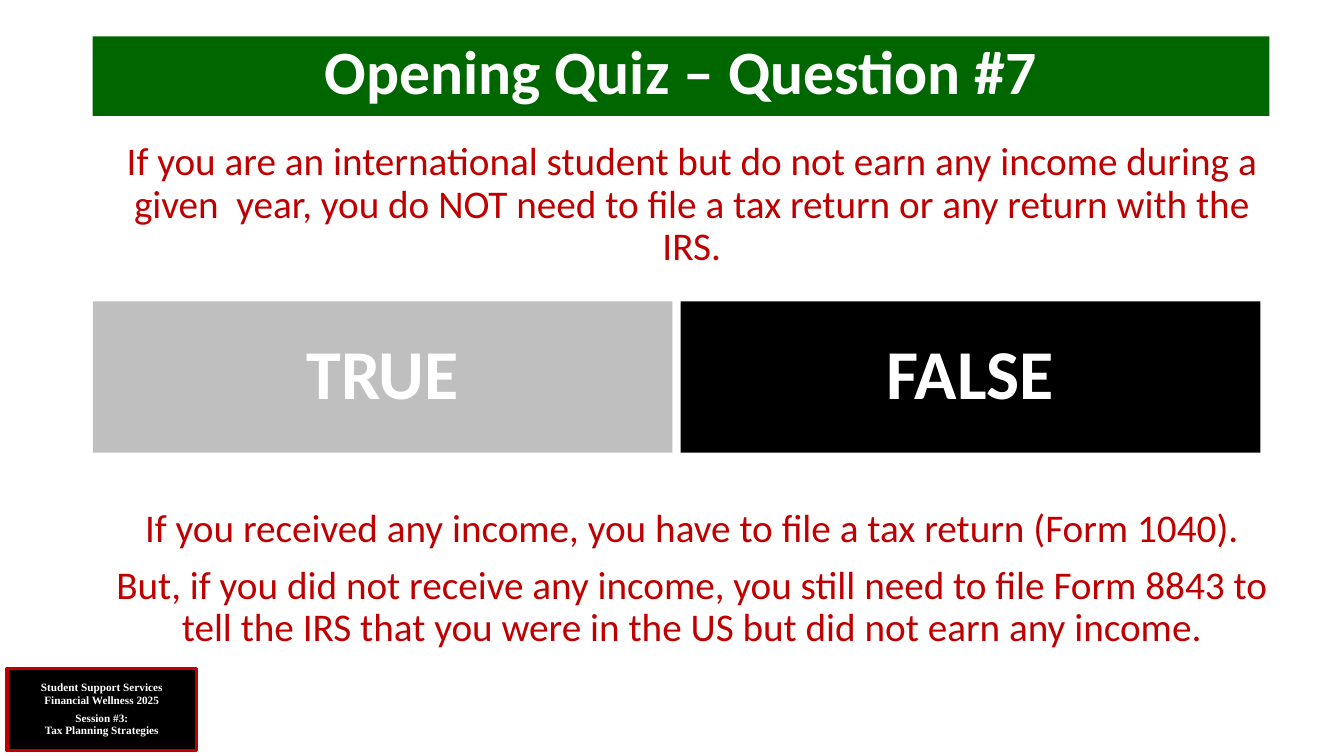
from pptx import Presentation
from pptx.dml.color import RGBColor
from pptx.enum.shapes import MSO_SHAPE
from pptx.enum.text import MSO_ANCHOR as Anchor, PP_ALIGN as Align
from pptx.util import Inches, Pt

WHITE = RGBColor(0xFF, 0xFF, 0xFF)
BLACK = RGBColor(0x00, 0x00, 0x00)
GREEN = RGBColor(0x00, 0x66, 0x00)
RED = RGBColor(0xC0, 0x00, 0x00)
GREY = RGBColor(0xBF, 0xBF, 0xBF)

MARGIN = 0.92
ANSWER_GAP = 0.08


def write(frame, paragraphs, size, color, font="Calibri", bold=False,
          anchor=Anchor.MIDDLE, gap=0):
    frame.word_wrap = True
    frame.vertical_anchor = anchor
    frame.text = "\n".join(paragraphs)
    for index, paragraph in enumerate(frame.paragraphs):
        paragraph.alignment = Align.CENTER
        paragraph.line_spacing = 0.9
        if index:
            paragraph.space_before = Pt(gap)
        for run in paragraph.runs:
            run.font.name = font
            run.font.size = Pt(size)
            run.font.bold = bold
            run.font.color.rgb = color


def add_panel(slide, box, fill, border=None):
    panel = slide.shapes.add_shape(MSO_SHAPE.RECTANGLE, *map(Inches, box))
    panel.shadow.inherit = False
    panel.fill.solid()
    panel.fill.fore_color.rgb = fill
    if border is None:
        panel.line.fill.background()
    else:
        panel.line.color.rgb = border
        panel.line.width = Pt(2.25)
    return panel.text_frame


def add_session_badge(slide, box, lines):
    badge = add_panel(slide, box, BLACK, RED)
    write(badge, lines, 8, WHITE, "Times New Roman", bold=True)
    badge.paragraphs[2].space_before = Pt(4.5)


def add_title(slide, box, title):
    write(add_panel(slide, box, GREEN), [title], 44, WHITE, bold=True, anchor=Anchor.TOP)


def add_statement(slide, box, paragraphs):
    statement = slide.shapes.add_textbox(*map(Inches, box)).text_frame
    write(statement, paragraphs, 28, RED, anchor=Anchor.TOP, gap=10)


def add_answers(slide, box, answers):
    left, top, width, height = box
    column = (width - ANSWER_GAP * (len(answers) - 1)) / len(answers)
    for index, (answer, fill) in enumerate(answers):
        cell = (left + index * (column + ANSWER_GAP), top, column, height)
        write(add_panel(slide, cell, fill), [answer], 50, WHITE, bold=True)


def build_quiz_slide(deck):
    slide = deck.slides.add_slide(deck.slide_layouts[6])
    add_session_badge(slide, (0.07, 6.63, 1.88, 0.82), [
        "Student Support Services",
        "Financial Wellness 2025",
        "Session #3:\vTax Planning Strategies",
    ])
    add_title(slide, (MARGIN, 0.36, 11.67, 0.79), "Opening Quiz – Question #7")
    add_statement(slide, (MARGIN, 1.36, 11.88, 1.45), [
        "If you are an international student but do not earn any income during a "
        "given  year, you do NOT need to file a tax return or any return with the IRS.",
    ])
    add_answers(slide, (MARGIN, 2.99, 11.58, 1.5), [("TRUE", GREY), ("FALSE", BLACK)])
    add_statement(slide, (MARGIN, 5, 11.88, 1.6), [
        "If you received any income, you have to file a tax return (Form 1040).",
        "But, if you did not receive any income, you still need to file Form 8843 to "
        "tell the IRS that you were in the US but did not earn any income.",
    ])


def main():
    deck = Presentation()
    deck.slide_width = Inches(13.33)
    deck.slide_height = Inches(7.5)
    build_quiz_slide(deck)
    deck.save("out.pptx")


if __name__ == "__main__":
    main()
